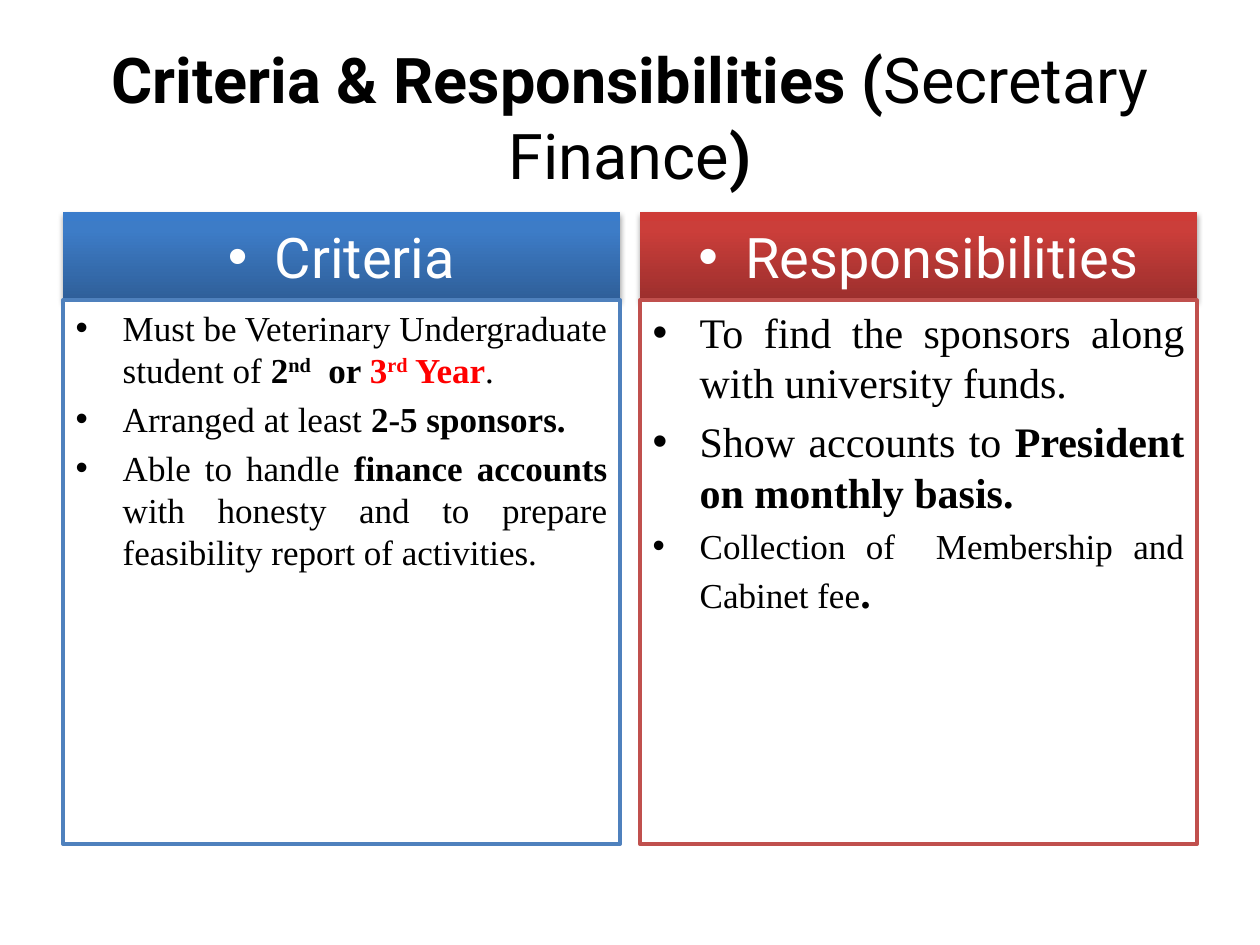
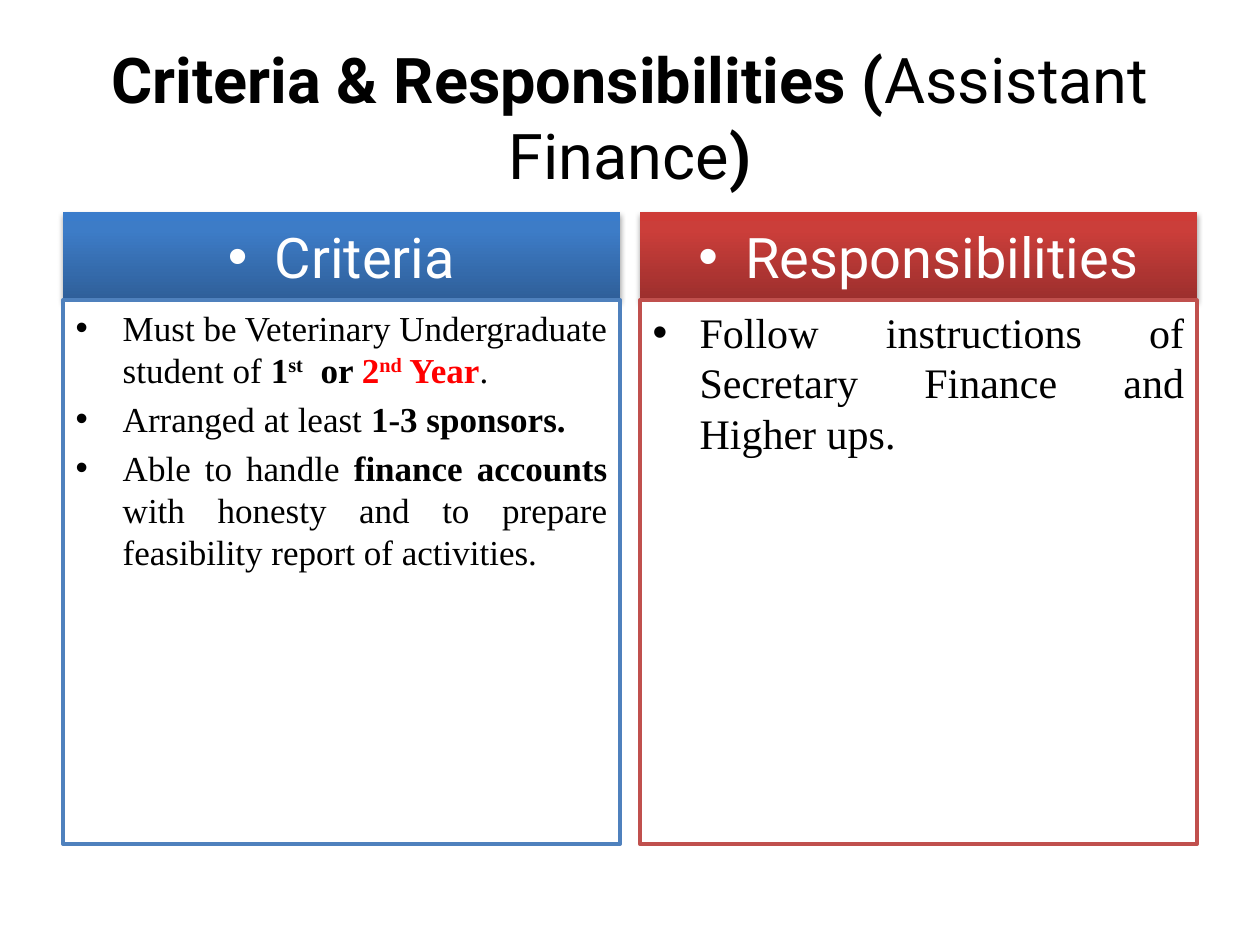
"""Build the criteria and responsibilities slides for the finance posts."""
from lxml.etree import SubElement
from pptx import Presentation
from pptx.dml.color import RGBColor as RGB
from pptx.enum.text import MSO_ANCHOR as ANCHOR, MSO_AUTO_SIZE as FIT, PP_ALIGN as ALIGN
from pptx.oxml import parse_xml
from pptx.oxml.ns import nsdecls, qn
from pptx.util import Cm, Pt

COLORS = {
    "text": "000000", "white": "FFFFFF", "accent": "FF0000",
    "blue": "4F81BD", "blue_dark": "2F5F99", "blue_mid": "3D7CC7", "blue_top": "3A7CCB",
    "red": "C0504D", "red_dark": "9C2F2D", "red_mid": "CB3E3A", "red_top": "CE3B37",
}
HEAD_FONT, BODY_FONT = "Roboto", "Times New Roman"
LEFT, COL_W, COL_STEP = 1.27, 11.23, 11.63
HEAD_TOP, HEAD_H, BODY_H = 4.27, 1.78, 10.97
INDENT = Cm(0.95)
COLUMNS = [("Criteria", "blue", 20), ("Responsibilities", "red", 24)]

BOLD = {"bold": True}
BOLD_SUP = {"bold": True, "sup": True}
RED = {"bold": True, "color": "accent"}
RED_SUP = {**RED, "sup": True}


def criteria(first, first_sup, second, second_sup, sponsors):
    return [
        [("Must be Veterinary Undergraduate student of ", {}), (first, BOLD),
         (first_sup, BOLD_SUP), ("  or ", BOLD), (second, RED),
         (second_sup, RED_SUP), (" Year", RED), (".", {})],
        [("Arranged at least ", {}), (f"{sponsors} sponsors.", BOLD)],
        [("Able to handle ", {}), ("finance accounts ", BOLD),
         ("with honesty and to prepare feasibility report of activities.", {})],
    ]


SLIDES = [
    ("Secretary Finance", criteria("2", "nd", "3", "rd", "2-5"), [
        [("To find the sponsors along with university funds.", {})],
        [("Show accounts to ", {}), ("President on monthly basis.", BOLD)],
        [("Collection of  Membership and Cabinet fee", {"size": 20}), (".", BOLD)],
    ]),
    ("Assistant Finance", criteria("1", "st", "2", "nd", "1-3"), [
        [("Follow instructions of Secretary Finance and Higher ups.", {})],
    ]),
]


def add_run(p, text, font, size, color="text", bold=False, sup=False):
    r = p.add_run()
    r.text = text
    r.font.name, r.font.size, r.font.bold = font, Pt(size), bold
    r.font.color.rgb = RGB.from_string(COLORS[color])
    if sup:
        r.font._element.set("baseline", "30000")


def place(sp, left, top, width, height, anchor):
    sp.left, sp.top, sp.width, sp.height = Cm(left), Cm(top), Cm(width), Cm(height)
    tf = sp.text_frame
    tf.auto_size, tf.word_wrap, tf.vertical_anchor = FIT.NONE, True, anchor
    return tf


def set_bullet(p):
    pPr = p._p.get_or_add_pPr()
    pPr.set("marL", str(INDENT))
    pPr.set("indent", str(-INDENT))
    SubElement(pPr, qn("a:buFont")).set("typeface", "Arial")
    SubElement(pPr, qn("a:buChar")).set("char", "•")


def set_gradient_and_shadow(sp, hue):
    stops = "".join(
        f'<a:gs pos="{pos}000"><a:srgbClr val="{COLORS[f"{hue}_{shade}"]}"/></a:gs>'
        for pos, shade in ((0, "dark"), (80, "mid"), (100, "top")))
    spPr = sp._element.spPr
    spPr.append(parse_xml(
        f'<a:gradFill {nsdecls("a")} rotWithShape="1"><a:gsLst>{stops}</a:gsLst>'
        '<a:lin ang="16200000" scaled="0"/></a:gradFill>'))
    spPr.append(parse_xml(
        f'<a:effectLst {nsdecls("a")}><a:outerShdw blurRad="{Pt(3.1)}" dist="{Pt(1.8)}" '
        f'dir="5400000" rotWithShape="0"><a:srgbClr val="{COLORS["text"]}">'
        '<a:alpha val="35000"/></a:srgbClr></a:outerShdw></a:effectLst>'))


def fill_title(sp, post):
    p = place(sp, 0, 0.76, 25.4, 3.18, ANCHOR.MIDDLE).paragraphs[0]
    p.alignment = ALIGN.CENTER
    for text, bold in (("Criteria & Responsibilities (", True), (post, False), (")", True)):
        add_run(p, text, HEAD_FONT, 36, bold=bold)


def fill_heading(sp, left, text, hue):
    p = place(sp, left, HEAD_TOP, COL_W, HEAD_H, ANCHOR.MIDDLE).paragraphs[0]
    p.alignment = ALIGN.CENTER
    set_bullet(p)
    add_run(p, text, HEAD_FONT, 32, "white")
    set_gradient_and_shadow(sp, hue)


def fill_list(sp, left, items, hue, size):
    tf = place(sp, left, HEAD_TOP + HEAD_H, COL_W, BODY_H, ANCHOR.TOP)
    sp.fill.solid()
    sp.fill.fore_color.rgb = RGB.from_string(COLORS["white"])
    sp.line.color.rgb = RGB.from_string(COLORS[hue])
    sp.line.width = Pt(2)
    for i, runs in enumerate(items):
        p = tf.add_paragraph() if i else tf.paragraphs[0]
        p.alignment = ALIGN.JUSTIFY
        set_bullet(p)
        for text, style in runs:
            add_run(p, text, BODY_FONT, **{"size": size, **style})


def main():
    prs = Presentation()
    prs.slide_width, prs.slide_height = Cm(25.4), Cm(19.05)
    comparison = prs.slide_layouts.get_by_name("Comparison")
    for post, *lists in SLIDES:
        slide = prs.slides.add_slide(comparison)
        title, *boxes = slide.placeholders
        fill_title(title, post)
        for i, ((heading, hue, size), items) in enumerate(zip(COLUMNS, lists)):
            left = LEFT + i * COL_STEP
            fill_heading(boxes[2 * i], left, heading, hue)
            fill_list(boxes[2 * i + 1], left, items, hue, size)
    prs.save("out.pptx")


if __name__ == "__main__":
    main()
